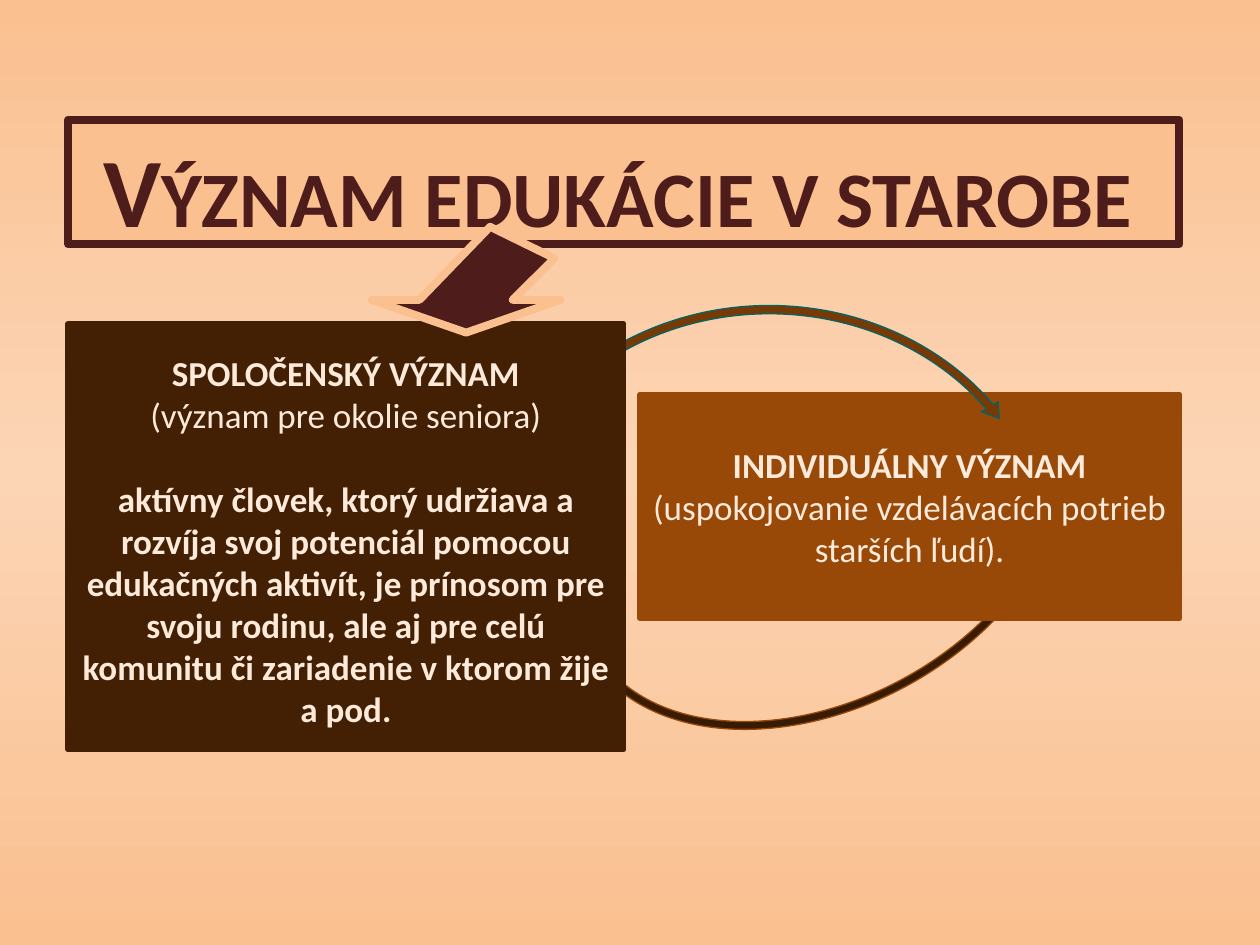
from copy import deepcopy
from pptx import Presentation
from pptx.dml.color import RGBColor
from pptx.enum import shapes, text
from pptx.util import Inches, Pt

HUES = {
    "peach": "FAC090", "pale": "FCD5B5", "wine": "4D1C1B",
    "rust": "984807", "cocoa": "432003", "dark": "371B03",
    "brown": "793905", "teal": "006666", "cream": "FDEADA",
}
KIND = shapes.MSO_SHAPE


def hue(name):
    return RGBColor.from_string(HUES[name])


def paint(shape, fill, line, width):
    shape.shadow.inherit = False
    shape.fill.solid()
    shape.fill.fore_color.rgb = hue(fill)
    shape.line.color.rgb = hue(line)
    shape.line.width = Pt(width)
    return shape


deck = Presentation()
deck.slide_width, deck.slide_height = Inches(10), Inches(7.5)
slide = deck.slides.add_slide(deck.slide_layouts[6])

back = slide.background.fill
back.gradient()
back.gradient_angle = 90
first = slide.element.xpath(".//a:gs")[0]
first.addnext(deepcopy(first))
for stop, (name, place) in zip(
        back.gradient_stops, [("peach", 0), ("pale", 0.5), ("peach", 1)]):
    stop.color.rgb = hue(name)
    stop.position = place

items = [
    (KIND.LEFT_CIRCULAR_ARROW, (4.35, 2.64, 4.3, 3.02), "dark", "rust", 0.75,
     331.3, (0.021, 2.501, 27.862, 110.706, 0.024), None, []),
    (KIND.RECTANGLE, (0.54, 0.95, 8.82, 0.99), "peach", "wine", 4.5,
     0, (), (0.28, 0.08, text.MSO_ANCHOR.TOP),
     [("Význam edukácie v starobe", 56.1, True, 0)]),
    (KIND.RECTANGLE, (5.08, 3.13, 4.28, 1.78), "rust", "rust", 3,
     0, (), (0.1, 0.05, text.MSO_ANCHOR.MIDDLE),
     [("INDIVIDUÁLNY VÝZNAM", 20, True, 0),
      ("(uspokojovanie vzdelávacích potrieb starších ľudí).", 20, False, 0)]),
    (KIND.CIRCULAR_ARROW, (3.82, 2.38, 4.57, 4.1), "brown", "teal", 0.75,
     0, (0.016, 1.942, 195.332, 124.784, 0.019), None, []),
    (KIND.RECTANGLE, (0.54, 2.57, 4.41, 3.38), "cocoa", "cocoa", 3,
     0, (), (0.1, 0.22, text.MSO_ANCHOR.TOP),
     [("SPOLOČENSKÝ VÝZNAM", 20, True, 0),
      ("(význam pre okolie seniora)", 20, False, 0),
      ("aktívny človek, ktorý udržiava a rozvíja svoj potenciál pomocou "
       "edukačných aktivít, je prínosom pre svoju rodinu, ale aj pre celú "
       "komunitu či zariadenie v ktorom žije a pod.", 20, True, 24)]),
]

for kind, spot, fill, line, width, turn, bends, inset, paras in items:
    shape = slide.shapes.add_shape(kind, *map(Inches, spot))
    paint(shape, fill, line, width)
    shape.rotation = turn
    for i, bend in enumerate(bends):
        shape.adjustments[i] = bend
    if not paras:
        continue
    frame = shape.text_frame
    frame.word_wrap = True
    frame.margin_left, frame.margin_top = map(Inches, inset[:2])
    frame.vertical_anchor = inset[2]
    title = fill == "peach"
    for i, (words, size, bold, gap) in enumerate(paras):
        para = frame.add_paragraph() if i else frame.paragraphs[0]
        para.alignment = text.PP_ALIGN.LEFT if title else text.PP_ALIGN.CENTER
        para.space_before = Pt(gap)
        para.font.name = "Calibri"
        para.font.size = Pt(size)
        para.font.bold = bold
        para.font.color.rgb = hue("wine" if title else "cream")
        run = para.add_run()
        run.text = words
        if title:
            run.font.bold = True
            run._r.get_or_add_rPr().set("cap", "small")

points = [(2.95, 2.38), (3.33, 2.38), (3.89, 1.8), (4.4, 2.05),
          (4.07, 2.38), (4.45, 2.38), (3.7, 2.64)]
spots = [(Inches(x), Inches(y)) for x, y in points]
draft = slide.shapes.build_freeform(*spots[0])
draft.add_line_segments(spots[1:], close=True)
paint(draft.convert_to_shape(), "wine", "peach", 4.5)

deck.save("out.pptx")
